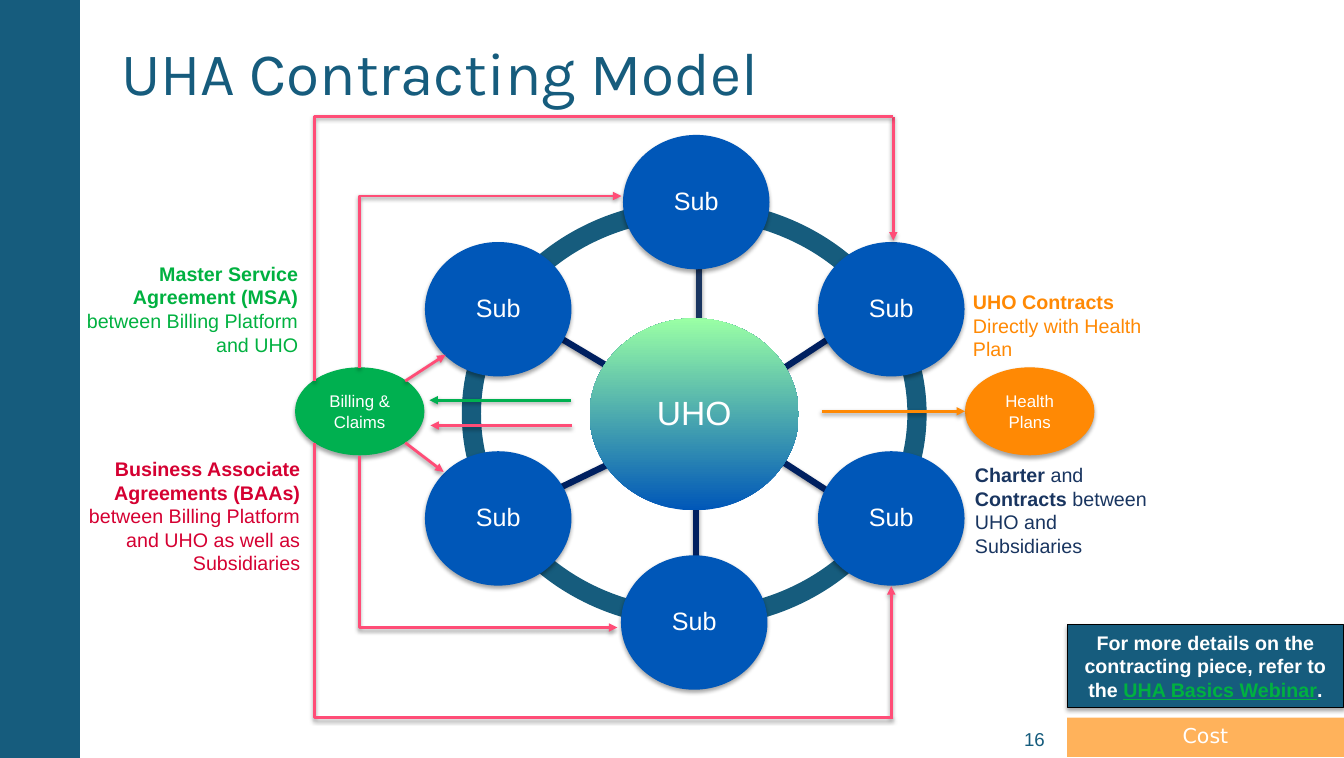
from lxml import etree
from pptx import Presentation
from pptx.dml.color import RGBColor
from pptx.enum.shapes import MSO_CONNECTOR, MSO_SHAPE
from pptx.enum.text import MSO_ANCHOR, MSO_AUTO_SIZE, PP_ALIGN
from pptx.oxml.ns import qn
from pptx.util import Inches, Pt

RECT, OVAL, DONUT = MSO_SHAPE.RECTANGLE, MSO_SHAPE.OVAL, MSO_SHAPE.DONUT
STRAIGHT, ELBOW = MSO_CONNECTOR.STRAIGHT, MSO_CONNECTOR.ELBOW
LEFT, CENTER, RIGHT = PP_ALIGN.LEFT, PP_ALIGN.CENTER, PP_ALIGN.RIGHT
TOP, MIDDLE = MSO_ANCHOR.TOP, MSO_ANCHOR.MIDDLE
NO_FIT = MSO_AUTO_SIZE.NONE

TEAL, BLUE, NAVY, SLATE = "165C7D", "0057B8", "002060", "193560"
GREEN, LEAF, ORANGE, SAND = "00B050", "00B140", "FF8904", "FFB25B"
PINK, RED, MINT, WHITE, BLACK = "FF4D77", "D50032", "9AFFA5", "FFFFFF", "000000"


def rgb(value):
    """Turn a hex string into a colour."""
    return RGBColor.from_string(value)


def add_shadow(shape, alpha, distance):
    """Give a shape or connector a soft shadow that falls straight down."""
    props = shape._element.spPr
    for old in props.findall(qn("a:effectLst")):
        props.remove(old)
    effects = etree.SubElement(props, qn("a:effectLst"))
    shadow = etree.SubElement(
        effects, qn("a:outerShdw"), blurRad=str(Pt(3.1)), dist=str(Pt(distance)),
        dir="5400000", rotWithShape="0")
    color = etree.SubElement(shadow, qn("a:srgbClr"), val=BLACK)
    etree.SubElement(color, qn("a:alpha"), val=str(alpha * 1000))


def write(shape, runs, size, color, align=CENTER, anchor=MIDDLE, font="Arial", inset=None):
    """Fill a shape with one paragraph of (text, bold) runs and return it."""
    tf = shape.text_frame
    tf.word_wrap = True
    tf.auto_size = NO_FIT
    tf.vertical_anchor = anchor
    if inset is not None:
        tf.margin_left = tf.margin_right = tf.margin_top = tf.margin_bottom = Inches(inset)
    p = tf.paragraphs[0]
    p.alignment = align
    p.font.name, p.font.size, p.font.color.rgb = font, Pt(size), rgb(color)
    for text, bold in runs:
        r = p.add_run()
        r.text, r.font.bold = text, bold
    return p


def add_block(s, kind, x, y, w, h, fill, line=None, shadow=False):
    """Add a filled preset shape, with an outline and a shadow if wanted."""
    sp = s.shapes.add_shape(kind, Inches(x), Inches(y), Inches(w), Inches(h))
    sp.shadow.inherit = False
    sp.fill.solid()
    sp.fill.fore_color.rgb = rgb(fill)
    if line:
        sp.line.color.rgb = rgb(line)
        sp.line.width = Pt(0.75)
    else:
        sp.line.fill.background()
    if shadow:
        add_shadow(sp, 35, 1.8)
    return sp


def add_oval(s, cx, cy, w, h, fill, **style):
    """Add an oval around a centre point."""
    return add_block(s, OVAL, cx - w / 2, cy - h / 2, w, h, fill, **style)


def add_line(s, x, y, start, end, color, width=2, arrow=None, kind=STRAIGHT):
    """Add a connector between two offsets from a point, with an optional arrowhead."""
    line = s.shapes.add_connector(
        kind, Inches(x + start[0]), Inches(y + start[1]), Inches(x + end[0]), Inches(y + end[1]))
    line.line.color.rgb = rgb(color)
    line.line.width = Pt(width)
    if kind == ELBOW:
        line._element.spPr.find(qn("a:prstGeom")).set("prst", "bentConnector2")
    if arrow:
        etree.SubElement(line.line._get_or_add_ln(), qn(f"a:{arrow}"), type="triangle")
    add_shadow(line, 38, 1.6)


def add_note(s, x, y, w, h, runs, color, align=LEFT):
    """Add a coloured caption."""
    box = s.shapes.add_textbox(Inches(x), Inches(y), Inches(w), Inches(h))
    write(box, runs, 14, color, align, TOP)


def add_title(s, x, y, w, h):
    """Place and format the slide title."""
    title = s.shapes.title
    title.left, title.top, title.width, title.height = map(Inches, (x, y, w, h))
    write(title, [("UHA Contracting Model", False)], 43, TEAL, LEFT, font="Karla")


def add_wheel(s, cx, cy):
    """Draw the ring, the hub and its six subsidiaries around a centre."""
    spokes = [
        ((1.37, 0.79), (0.69, 0.35), NAVY), ((0.83, -0.42), (1.38, -0.78), NAVY),
        ((0.05, -0.66), (0.05, -1.62), SLATE), ((-1.4, -0.8), (-0.73, -0.4), NAVY),
        ((-1.42, 0.77), (-0.82, 0.48), NAVY), ((0.02, 0.85), (0.02, 1.53), NAVY)]
    for start, end, color in spokes:
        add_line(s, cx, cy, start, end, color, 4.5)
    ring = add_block(s, DONUT, cx - 2.3, cy - 2.12, 4.6, 4.23, TEAL)
    ring.adjustments[0] = 0.045

    hub = add_oval(s, cx, cy, 2.07, 1.9, BLUE)
    hub.fill.gradient()
    hub.fill.gradient_angle = 90
    for stop, color in zip(hub.fill.gradient_stops, (BLUE, MINT)):
        stop.color.rgb = rgb(color)
    write(hub, [("UHO", False)], 23.9, WHITE, inset=0.22).line_spacing = 0.9

    corners = [(dx, dy) for dx in (-1.94, 1.95) for dy in (-1.04, 1.03)]
    for dx, dy in corners + [(0, 2.06), (0.02, -2.1)]:
        sub = add_oval(s, cx + dx, cy + dy, 1.45, 1.33, BLUE, shadow=True)
        write(sub, [("Sub", False)], 17.9, WHITE, inset=0.15).line_spacing = 0.9


def add_billing(s, cx, cy):
    """Draw the billing oval and the agreements that lead to and from it."""
    oval = add_oval(s, cx, cy, 1.27, 0.86, GREEN, line=GREEN, shadow=True)
    write(oval, [("Billing & Claims", False)], 12, WHITE)
    arrows = [
        ((2.09, -0.11), (0.69, -0.11), GREEN), ((2.1, 0.14), (0.7, 0.14), PINK),
        ((0.45, -0.3), (0.85, -0.56), PINK), ((0.45, 0.31), (0.83, 0.6), PINK),
        ((5.28, -2.91), (5.28, -1.69), PINK), ((5.26, 3.03), (5.26, 1.73), PINK)]
    for start, end, color in arrows:
        add_line(s, cx, cy, start, end, color, arrow="tailEnd")
    elbows = [
        ((2.55, 2.14), (0, 0.44), "headEnd"), ((2.59, -2.13), (0, -0.43), "headEnd"),
        ((5.28, 3.03), (-0.45, 0.31), None), ((5.28, -2.92), (-0.45, -0.3), None)]
    for start, end, arrow in elbows:
        add_line(s, cx, cy, start, end, PINK, arrow=arrow, kind=ELBOW)


def add_health_plans(s, cx, cy):
    """Draw the health plans oval and the contract arrow that reaches it."""
    oval = add_oval(s, cx, cy, 1.27, 0.86, ORANGE, line=ORANGE, shadow=True)
    write(oval, [("Health Plans", False)], 12, WHITE)
    add_line(s, cx, cy, (-2.06, 0), (-0.64, 0), ORANGE, arrow="tailEnd")


def add_notes(s, left, right, top):
    """Place the captions against the right edge of one column and the left of another."""
    add_note(s, left - 2.53, top, 2.51, 1.04,
             [("Master Service Agreement (MSA)", True),
              (" between Billing Platform and UHO", False)], LEAF, RIGHT)
    add_note(s, left - 2.29, top + 1.93, 2.29, 1.28,
             [("Business Associate Agreements (BAAs) ", True),
              ("between Billing Platform and UHO as well as Subsidiaries", False)], RED, RIGHT)
    add_note(s, right, top + 0.28, 2.02, 0.81,
             [("UHO Contracts ", True), ("Directly with Health Plan", False)], ORANGE)
    add_note(s, right + 0.02, top + 1.99, 1.92, 1.04,
             [("Charter", True), (" and ", False), ("Contracts", True),
              (" between UHO and Subsidiaries", False)], SLATE)


def add_corner(s, x, y, w):
    """Place the webinar box, the section tag and the page number."""
    box = add_block(s, RECT, x, y, w, 0.82, TEAL, line=BLACK, shadow=True)
    p = write(box, [("For more details on the contracting piece, refer to the ", True),
                    ("UHA Basics Webinar", True), (".", True)], 14, WHITE)
    p.runs[1].font.underline = True
    p.runs[1].font.color.rgb = rgb(LEAF)
    tag = add_block(s, RECT, x, y + 0.92, w, 0.39, SAND)
    write(tag, [("Cost", False)], 14.6, WHITE, anchor=TOP, font="DejaVu Sans")
    number = s.shapes.add_textbox(Inches(x - 1.32), Inches(y + 0.93), Inches(1.23), Inches(0.4))
    write(number, [("16", False)], 13.3, TEAL, RIGHT, inset=0.13)


def main():
    """Build the slide and save it."""
    prs = Presentation()
    prs.slide_width, prs.slide_height = Inches(13.3), Inches(7.5)
    s = prs.slides.add_slide(prs.slide_layouts[5])
    add_block(s, RECT, 0, 0, 0.79, 7.5, TEAL)
    add_wheel(s, 6.87, 4.1)
    add_title(s, 1.1, 0.28, 11.53, 0.85)
    add_notes(s, 3.07, 9.53, 2.54)
    add_health_plans(s, 10.19, 4.07)
    add_billing(s, 3.56, 4.07)
    add_corner(s, 10.56, 6.18, 2.74)
    prs.save("out.pptx")


if __name__ == "__main__":
    main()
